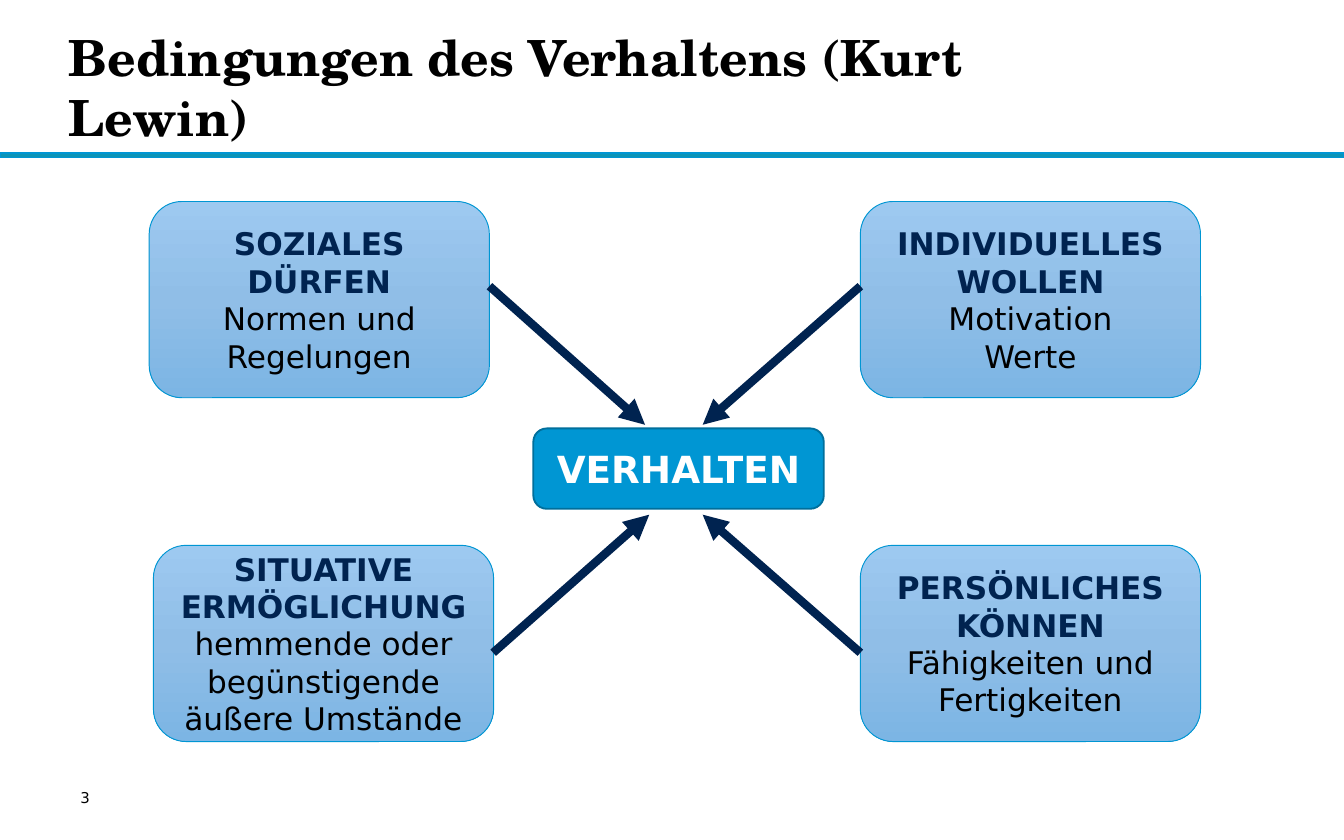
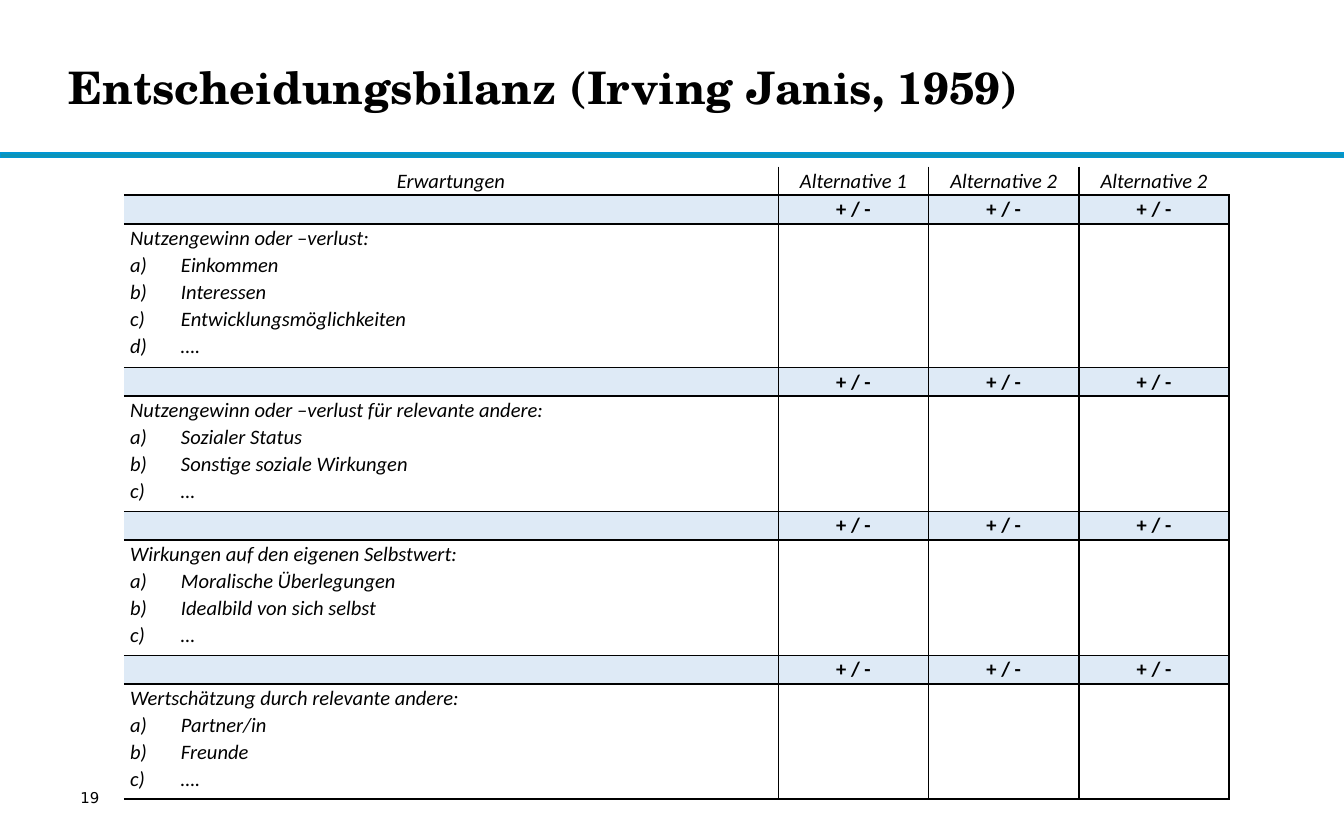
"""Build two slides on conditions of behaviour and the decision balance sheet."""
import copy
from dataclasses import dataclass

import pptx
import pptx.dml.color
import pptx.enum.shapes
import pptx.enum.text
import pptx.oxml.ns
import pptx.util
from lxml import etree

Cm = pptx.util.Cm
Pt = pptx.util.Pt
qn = pptx.oxml.ns.qn
ALIGN = pptx.enum.text.PP_ALIGN
MIDDLE = pptx.enum.text.MSO_ANCHOR.MIDDLE
SHAPES = pptx.enum.shapes.MSO_SHAPE

COLORS = {
    "black": "000000",
    "white": "FFFFFF",
    "band": "0C94B7",
    "blue": "0096D3",
    "blue_edge": "006F9C",
    "navy": "002350",
    "row_tint": "DEEAF6",
}
BOX_GRADIENT = ((0, "9DC9F0"), (0.5, "90BEE7"), (1, "7CB5E4"))
TITLE_FONT, BODY_FONT, TABLE_FONT = "TeX Gyre Schola", "DejaVu Sans", "Calibri"
SLIDE_WIDTH, SLIDE_HEIGHT = 25.4, 15.88
BOX_WIDTH, BOX_HEIGHT = 6.43, 3.71
COLUMN_WIDTHS = (12.37, 2.84, 2.84, 2.84)
HEADER_HEIGHT, LINE_HEIGHT = 0.54, 0.54


@dataclass(frozen=True)
class TextStyle:
    font: str
    size: float
    color: str = "black"
    bold: bool = False
    italic: bool = False


@dataclass(frozen=True)
class Condition:
    left: float
    top: float
    heading: tuple[str, ...]
    details: tuple[str, ...]


@dataclass(frozen=True)
class Arrow:
    start: tuple[float, float]
    end: tuple[float, float]


@dataclass(frozen=True)
class Expectation:
    heading: str
    items: tuple[str, ...]
    height: float


PAGE_NUMBER = TextStyle(BODY_FONT, 8)
CENTER = TextStyle(BODY_FONT, 20, "white", bold=True)
BOX_HEADING = TextStyle(BODY_FONT, 16.7, "navy", bold=True)
BOX_DETAIL = TextStyle(BODY_FONT, 16.7)
TABLE_TEXT = TextStyle(TABLE_FONT, 11, italic=True)
TABLE_SIGN = TextStyle(TABLE_FONT, 11, bold=True)

CONDITIONS = (
    Condition(2.82, 3.81, ("SOZIALES", "DÜRFEN"), ("Normen und", "Regelungen")),
    Condition(2.9, 10.31, ("SITUATIVE", "ERMÖGLICHUNG"),
              ("hemmende oder begünstigende äußere Umstände",)),
    Condition(16.26, 3.81, ("INDIVIDUELLES", "WOLLEN"), ("Motivation", "Werte")),
    Condition(16.26, 10.31, ("PERSÖNLICHES", "KÖNNEN"),
              ("Fähigkeiten und", "Fertigkeiten")),
)
ARROWS = (
    Arrow((9.25, 5.41), (12.19, 8.03)),
    Arrow((9.32, 12.34), (12.27, 9.73)),
    Arrow((16.26, 5.41), (13.28, 8.03)),
    Arrow((16.26, 12.34), (13.28, 9.73)),
)
TABLE_HEADER = ("Erwartungen", "Alternative 1", "Alternative 2", "Alternative 2")
EXPECTATIONS = (
    Expectation("Nutzengewinn oder –verlust:",
                ("Einkommen", "Interessen", "Entwicklungsmöglichkeiten", "…."), 2.72),
    Expectation("Nutzengewinn oder –verlust für relevante andere:",
                ("Sozialer Status", "Sonstige soziale Wirkungen", "…"), 2.18),
    Expectation("Wirkungen auf den eigenen Selbstwert:",
                ("Moralische Überlegungen", "Idealbild von sich selbst", "…"), 2.18),
    Expectation("Wertschätzung durch relevante andere:",
                ("Partner/in", "Freunde", "…."), 2.18),
)


def rgb(value: str) -> pptx.dml.color.RGBColor:
    return pptx.dml.color.RGBColor.from_string(COLORS.get(value, value))


def add_run(paragraph, text: str, style: TextStyle) -> None:
    run = paragraph.add_run()
    run.text = text
    run.font.name = style.font
    run.font.size = Pt(style.size)
    run.font.bold = style.bold
    run.font.italic = style.italic
    run.font.color.rgb = rgb(style.color)


def add_lines(text_frame, lines, alignment=ALIGN.LEFT) -> list:
    paragraphs = []
    for index, (text, style) in enumerate(lines):
        paragraph = text_frame.add_paragraph() if index else text_frame.paragraphs[0]
        paragraph.alignment = alignment
        add_run(paragraph, text, style)
        paragraphs.append(paragraph)
    return paragraphs


def add_text_box(slide, place, text: str, style: TextStyle):
    text_frame = slide.shapes.add_textbox(*map(Cm, place)).text_frame
    text_frame.word_wrap = True
    add_lines(text_frame, [(text, style)])
    return text_frame


def add_box(slide, kind, place, fill: str, edge: str, edge_width: float):
    shape = slide.shapes.add_shape(kind, *map(Cm, place))
    shape.shadow.inherit = False
    shape.fill.solid()
    shape.fill.fore_color.rgb = rgb(fill)
    shape.line.color.rgb = rgb(edge)
    shape.line.width = Pt(edge_width)
    shape.text_frame.word_wrap = True
    shape.text_frame.vertical_anchor = MIDDLE
    return shape


def add_base_slide(presentation, title: str, title_size: float, number: str):
    slide = presentation.slides.add_slide(presentation.slide_layouts[6])
    add_box(slide, SHAPES.RECTANGLE, (0, 2.9, SLIDE_WIDTH, 0.08), "band", "blue", 1)
    title_style = TextStyle(TITLE_FONT, title_size, bold=True)
    text_frame = add_text_box(slide, (1.3, 0.38, 19, 2.51), title, title_style)
    text_frame.vertical_anchor = MIDDLE
    text_frame.margin_left = text_frame.margin_right = 0
    text_frame.margin_top = text_frame.margin_bottom = 0
    add_text_box(slide, (1.27, 14.78, 2.49, 0.71), number, PAGE_NUMBER)
    return slide


def apply_box_gradient(shape) -> None:
    shape.fill.gradient()
    shape.fill.gradient_angle = 270
    first_stop = next(shape.element.iter(qn("a:gs")))
    first_stop.addnext(copy.deepcopy(first_stop))
    for stop, (position, color) in zip(shape.fill.gradient_stops, BOX_GRADIENT):
        stop.position = position
        stop.color.rgb = rgb(color)


def add_condition(slide, condition: Condition) -> None:
    place = (condition.left, condition.top, BOX_WIDTH, BOX_HEIGHT)
    shape = add_box(slide, SHAPES.ROUNDED_RECTANGLE, place, "blue", "blue", 0.5)
    apply_box_gradient(shape)
    lines = [(text, BOX_HEADING) for text in condition.heading]
    lines += [(text, BOX_DETAIL) for text in condition.details]
    add_lines(shape.text_frame, lines, ALIGN.CENTER)


def add_arrow(slide, arrow: Arrow) -> None:
    connector = slide.shapes.add_connector(
        pptx.enum.shapes.MSO_CONNECTOR.STRAIGHT, *map(Cm, arrow.start + arrow.end))
    connector.line.color.rgb = rgb("navy")
    connector.line.width = Pt(4.5)
    etree.SubElement(connector.line._get_or_add_ln(), qn("a:tailEnd"), type="triangle")
    etree.SubElement(connector.element.spPr, qn("a:effectLst"))


def build_behaviour_slide(presentation) -> None:
    slide = add_base_slide(presentation, "Bedingungen des Verhaltens (Kurt Lewin)", 26.7, "3")
    center = add_box(slide, SHAPES.ROUNDED_RECTANGLE, (10.08, 8.1, 5.49, 1.52),
                     "blue", "blue_edge", 1)
    add_lines(center.text_frame, [("VERHALTEN", CENTER)], ALIGN.CENTER)
    for condition in CONDITIONS:
        add_condition(slide, condition)
    for arrow in ARROWS:
        add_arrow(slide, arrow)


def set_borders(cell, visible: dict[str, bool]) -> None:
    properties = cell._tc.get_or_add_tcPr()
    for side, shown in visible.items():
        line = etree.SubElement(properties, qn(f"a:ln{side}"), w=str(Pt(1)))
        if shown:
            fill = etree.SubElement(line, qn("a:solidFill"))
            etree.SubElement(fill, qn("a:srgbClr"), val=COLORS["black"])
        else:
            etree.SubElement(line, qn("a:noFill"))


def fill_cell(cell, lines, fill: str, alignment) -> None:
    cell.margin_left = cell.margin_right = Cm(0.12)
    cell.margin_top = cell.margin_bottom = 0
    cell.fill.solid()
    cell.fill.fore_color.rgb = rgb(fill)
    if not lines:
        paragraph = cell.text_frame.paragraphs[0]
        etree.SubElement(paragraph._p, qn("a:endParaRPr"), sz=str(TABLE_TEXT.size * 100))
    paragraphs = add_lines(cell.text_frame, lines, alignment)
    for paragraph in paragraphs:
        paragraph.line_spacing = 1.07
    for paragraph in paragraphs[1:]:
        properties = paragraph._p.get_or_add_pPr()
        properties.set("marL", str(Cm(0.96)))
        properties.set("indent", str(-Cm(0.96)))
        etree.SubElement(properties, qn("a:buAutoNum"), type="alphaLcParenR")


def build_balance_slide(presentation) -> None:
    slide = add_base_slide(presentation, "Entscheidungsbilanz (Irving Janis, 1959)", 24, "19")
    alternatives = len(COLUMN_WIDTHS) - 1
    sign_cells = [[]] + [[("+ / -", TABLE_SIGN)]] * alternatives
    rows = [(HEADER_HEIGHT, "white", ALIGN.CENTER,
             [[(text, TABLE_TEXT)] for text in TABLE_HEADER])]
    for expectation in EXPECTATIONS:
        lines = [(text, TABLE_TEXT) for text in (expectation.heading, *expectation.items)]
        rows.append((LINE_HEIGHT, "row_tint", ALIGN.CENTER, sign_cells))
        rows.append((expectation.height, "white", ALIGN.LEFT, [lines] + [[]] * alternatives))

    height = sum(row[0] for row in rows)
    table = slide.shapes.add_table(
        len(rows), len(COLUMN_WIDTHS), Cm(2.34), Cm(3.15),
        Cm(sum(COLUMN_WIDTHS)), Cm(height)).table
    table.first_row = table.horz_banding = False
    for column, width in zip(table.columns, COLUMN_WIDTHS):
        column.width = Cm(width)
    for row_index, (row_height, fill, alignment, cells) in enumerate(rows):
        table.rows[row_index].height = Cm(row_height)
        for column_index, lines in enumerate(cells):
            cell = table.cell(row_index, column_index)
            set_borders(cell, {
                "L": column_index > 0,
                "R": column_index < alternatives or row_index > 0,
                "T": row_index > 0,
                "B": True,
            })
            fill_cell(cell, lines, fill, alignment)


def main() -> None:
    presentation = pptx.Presentation()
    presentation.slide_width = Cm(SLIDE_WIDTH)
    presentation.slide_height = Cm(SLIDE_HEIGHT)
    build_behaviour_slide(presentation)
    build_balance_slide(presentation)
    presentation.save("out.pptx")


if __name__ == "__main__":
    main()
